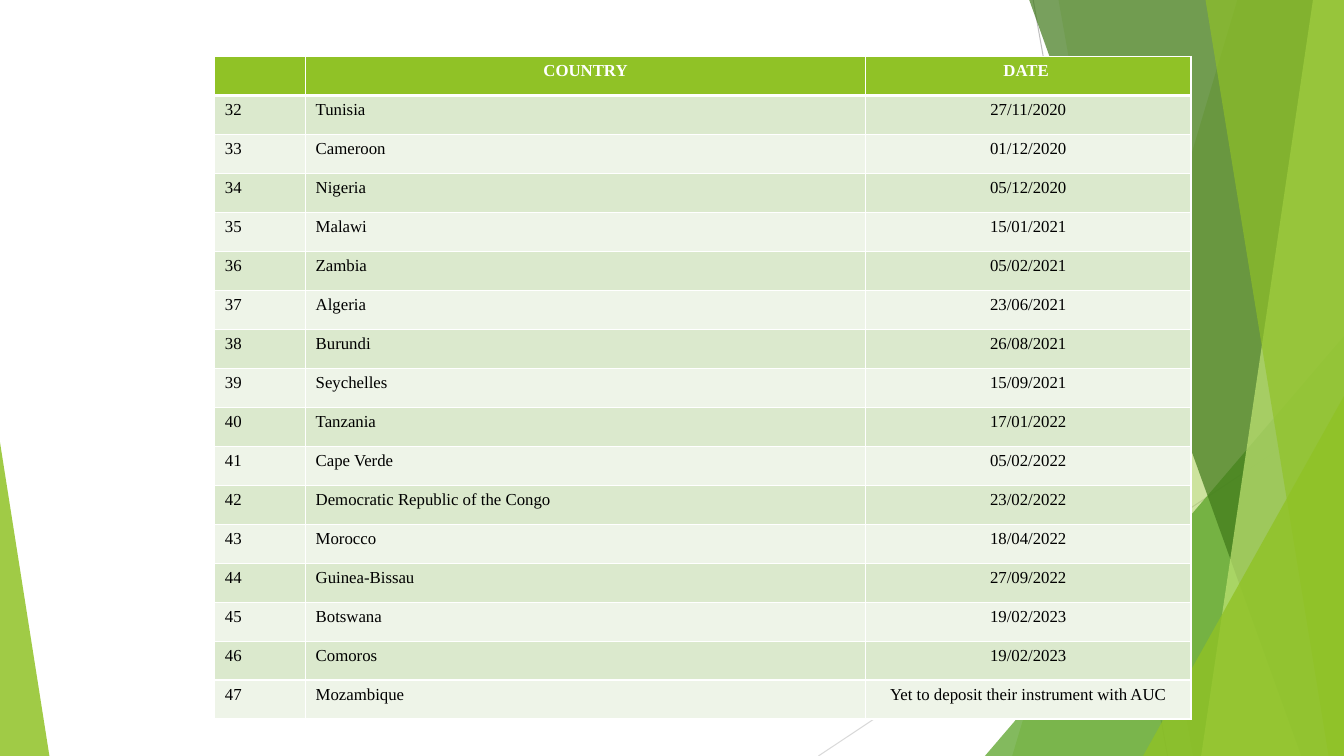
import pptx
import pptx.util
import pptx.dml.color
import pptx.enum.shapes
import pptx.enum.text
import pptx.oxml
import pptx.oxml.ns

Pt = pptx.util.Pt
CENTER = pptx.enum.text.PP_ALIGN.CENTER
LEFT = pptx.enum.text.PP_ALIGN.LEFT

WIDTH, HEIGHT = 960, 540
FONT = "Times New Roman"
GREEN, WHITE, BLACK = "90C226", "FFFFFF", "000000"
BANDS = ("DBE9CD", "EEF4E8")

TABLE_LEFT, TABLE_TOP = 153.5, 40.4
COLUMN_WIDTHS = (64.8, 400, 232.4)
ROW_HEIGHT = 27.86
FIRST_NUMBER = 32
HEADINGS = ("", "COUNTRY", "DATE ")
DEPOSITS = (
    ("Tunisia", "27/11/2020"),
    ("Cameroon", "01/12/2020"),
    ("Nigeria", "05/12/2020"),
    ("Malawi", "15/01/2021"),
    ("Zambia", "05/02/2021"),
    ("Algeria", "23/06/2021"),
    ("Burundi", "26/08/2021"),
    ("Seychelles", "15/09/2021"),
    ("Tanzania", "17/01/2022"),
    ("Cape Verde", "05/02/2022"),
    ("Democratic Republic of the Congo", "23/02/2022"),
    ("Morocco", "18/04/2022"),
    ("Guinea-Bissau", "27/09/2022"),
    ("Botswana", "19/02/2023"),
    ("Comoros", "19/02/2023"),
    ("Mozambique", "Yet to deposit their instrument with AUC"),
)


def color(hex_value):
    return pptx.dml.color.RGBColor.from_string(hex_value)


def xml(tag, content="", attributes=""):
    namespace = pptx.oxml.ns.nsdecls("a")
    return pptx.oxml.parse_xml(f"<a:{tag} {namespace} {attributes}>{content}</a:{tag}>")


def paint(facet, hex_value, opacity):
    """Fill a decorative facet with a see-through colour and no outline."""
    facet.shadow.inherit = False
    facet.line.fill.background()
    facet.fill.solid()
    facet.fill.fore_color.rgb = color(hex_value)
    srgb = facet.fill._xPr.find(".//" + pptx.oxml.ns.qn("a:srgbClr"))
    srgb.append(xml("alpha", attributes=f'val="{opacity * 1000}"'))


def add_ray(slide, start, end, hex_value):
    ray = slide.shapes.add_connector(
        pptx.enum.shapes.MSO_CONNECTOR.STRAIGHT, *map(Pt, start + end))
    ray.line.color.rgb = color(hex_value)
    ray.line.width = Pt(0.75)
    ray._element.spPr.append(xml("effectLst"))


def add_shard(slide, top_left, bottom_left, hex_value, opacity):
    """Full-height facet with a slanted left side, reaching the right edge."""
    top = -0.6
    builder = slide.shapes.build_freeform(Pt(top_left), Pt(top))
    corners = ((WIDTH, top), (WIDTH, HEIGHT), (bottom_left, HEIGHT))
    builder.add_line_segments([(Pt(x), Pt(y)) for x, y in corners], close=True)
    paint(builder.convert_to_shape(), hex_value, opacity)


def add_corner(slide, left, top, width, apex, hex_value, opacity):
    """Triangle standing on the bottom edge, with its apex at one side."""
    corner = slide.shapes.add_shape(
        pptx.enum.shapes.MSO_SHAPE.ISOSCELES_TRIANGLE,
        Pt(left), Pt(top), Pt(width), Pt(HEIGHT - top))
    corner.adjustments[0] = apex
    paint(corner, hex_value, opacity)


def set_borders(cell, top=1, bottom=1):
    properties = cell._tc.get_or_add_tcPr()
    sides = (("lnL", 1), ("lnR", 1), ("lnT", top), ("lnB", bottom))
    for position, (side, width) in enumerate(sides):
        line_fill = f'<a:solidFill><a:srgbClr val="{WHITE}"/></a:solidFill>'
        properties.insert(position, xml(side, line_fill, f'w="{Pt(width)}"'))


def fill_cell(cell, text, fill, text_color, alignment, bold):
    cell.fill.solid()
    cell.fill.fore_color.rgb = color(fill)
    cell.text = text
    paragraph = cell.text_frame.paragraphs[0]
    paragraph.alignment = alignment
    paragraph.font.name = FONT
    paragraph.font.size = Pt(12)
    paragraph.font.bold = bold
    paragraph.font.color.rgb = color(text_color)


def add_deposit_table(slide):
    rows = [HEADINGS] + [
        (str(number), country, date)
        for number, (country, date) in enumerate(DEPOSITS, FIRST_NUMBER)]
    table = slide.shapes.add_table(
        len(rows), len(HEADINGS), Pt(TABLE_LEFT), Pt(TABLE_TOP),
        Pt(sum(COLUMN_WIDTHS)), Pt(ROW_HEIGHT * len(rows))).table
    for column, width in zip(table.columns, COLUMN_WIDTHS):
        column.width = Pt(width)
    for r, row in enumerate(rows):
        table.rows[r].height = Pt(ROW_HEIGHT)
        header = r == 0
        fill = GREEN if header else BANDS[(r - 1) % 2]
        for c, text in enumerate(row):
            cell = table.cell(r, c)
            alignment = CENTER if header or c == 2 else LEFT
            fill_cell(cell, text, fill, WHITE if header else BLACK, alignment, header)
            set_borders(cell, top=3 if r == 1 else 1, bottom=3 if header else 1)


def main():
    presentation = pptx.Presentation()
    presentation.slide_width, presentation.slide_height = Pt(WIDTH), Pt(HEIGHT)
    slide = presentation.slides.add_slide(presentation.slide_layouts[6])

    # Green facets on the right and in the lower left corner
    add_ray(slide, (738, 0), (834, HEIGHT), "BFBFBF")
    add_ray(slide, (WIDTH, 290), (584.6, HEIGHT), "D9D9D9")
    add_shard(slide, 884, 723, GREEN, 30)
    add_shard(slide, 756, 852, GREEN, 20)
    add_corner(slide, 703.5, 240, 256.5, 1, "54A021", 72)
    add_shard(slide, 735, 929.5, "3F7819", 70)
    add_shard(slide, 938, 858, "C0E474", 70)
    add_shard(slide, 861, 949, GREEN, 65)
    add_corner(slide, 816.5, 283, 143.5, 1, GREEN, 80)
    add_corner(slide, 0, 316, 35.3, 0, GREEN, 85)

    # Countries and their dates
    add_deposit_table(slide)

    presentation.save("out.pptx")


if __name__ == "__main__":
    main()
